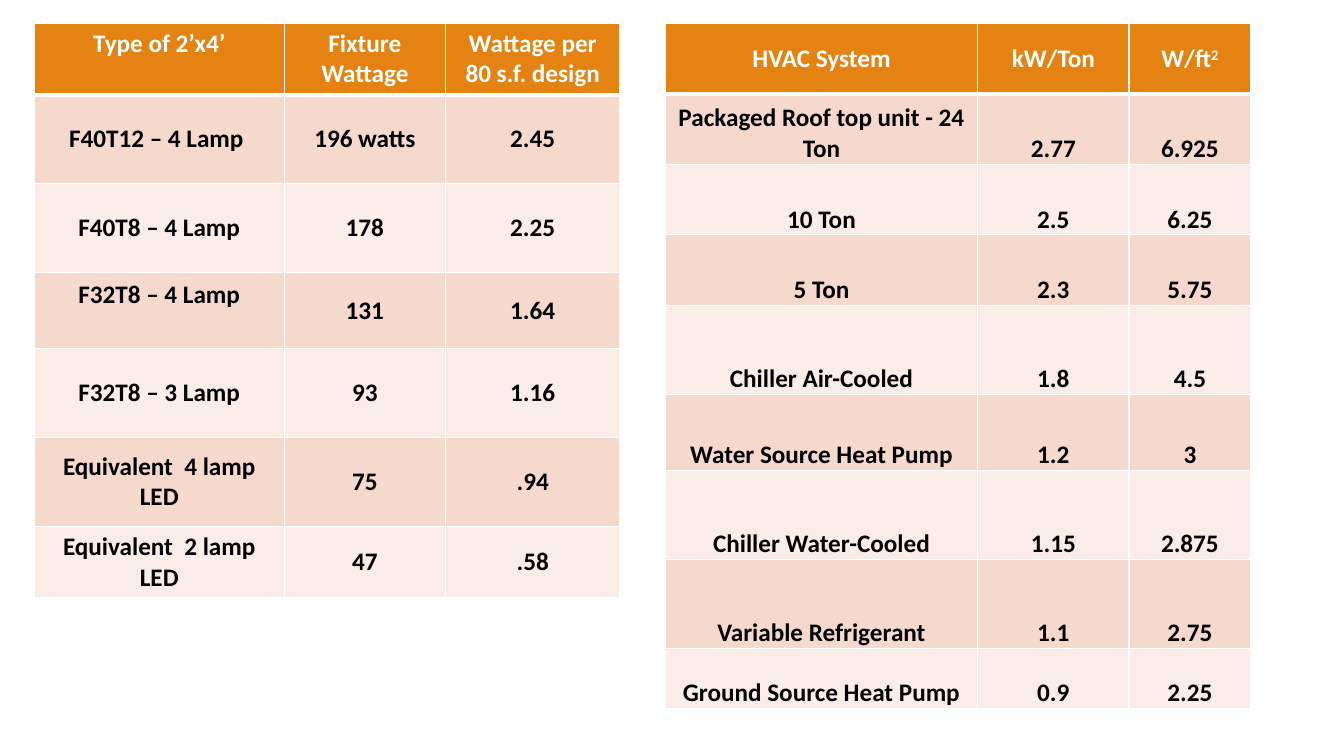
from lxml import etree
from pptx import Presentation
from pptx.dml.color import RGBColor
from pptx.enum.text import MSO_ANCHOR, PP_ALIGN
from pptx.oxml.ns import qn
from pptx.util import Pt

TOP, MIDDLE, BOTTOM = MSO_ANCHOR.TOP, MSO_ANCHOR.MIDDLE, MSO_ANCHOR.BOTTOM
CENTER = PP_ALIGN.CENTER
COLORS = {"header": "E48312", "odd": "F5D9CC", "even": "FAEDE7",
          "white": "FFFFFF", "black": "000000"}

lighting = {
    "left": 24.48,
    "widths": [178.56, 115.2, 124.56],
    "heights": [50.4, 63.36, 63.36, 54.72, 63.36, 63.36, 50.4],
    "anchors": (TOP, MIDDLE),
    "insets": (7.2, 3.6, 7.2, 3.6),
    "rows": [
        ("Type of 2’x4’", "Fixture Wattage", "Wattage per 80 s.f. design"),
        ("F40T12 – 4 Lamp ", "196 watts", "2.45"),
        ("F40T8 – 4 Lamp", "178", "2.25"),
        ("F32T8 – 4 Lamp", "131", "1.64"),
        ("F32T8 – 3 Lamp", "93", "1.16"),
        ("Equivalent  4 lamp LED", "75", ".94"),
        ("Equivalent  2 lamp LED", "47", ".58"),
    ],
}
hvac = {
    "left": 475.2,
    "widths": [223.2, 108, 87.12],
    "heights": [50.4, 50.4, 50.4, 50.4, 63.36, 54.72, 63.36, 63.36, 43.2],
    "anchors": (MIDDLE, BOTTOM),
    "insets": (0.72, 0.72, 0.72, 0),
    "rows": [
        ("HVAC System", "kW/Ton", "W/ft^2"),
        ("Packaged Roof top unit - 24 Ton", "2.77", "6.925"),
        ("10 Ton", "2.5", "6.25"),
        ("5 Ton", "2.3", "5.75"),
        ("Chiller Air-Cooled", "1.8", "4.5"),
        ("Water Source Heat Pump", "1.2", "3"),
        ("Chiller Water-Cooled", "1.15", "2.875"),
        ("Variable Refrigerant", "1.1", "2.75"),
        ("Ground Source Heat Pump", "0.9", "2.25"),
    ],
}


def write_text(cell, text, *, color, anchor, insets):
    """Write centred bold text; what follows a ^ is superscript."""
    cell.vertical_anchor = anchor
    (cell.margin_left, cell.margin_top,
     cell.margin_right, cell.margin_bottom) = map(Pt, insets)
    paragraph = cell.text_frame.paragraphs[0]
    paragraph.alignment = CENTER
    for level, part in enumerate(text.split("^")):
        run = paragraph.add_run()
        run.text = part
        run.font.name = "Calibri"
        run.font.size = Pt(18)
        run.font.bold = True
        run.font.color.rgb = RGBColor.from_string(COLORS[color])
        if level:
            run._r.get_or_add_rPr().set("baseline", "30000")


def set_borders(cell, top, bottom):
    """Draw white cell borders; widths of top and bottom are in points."""
    properties = cell._tc.get_or_add_tcPr()
    sides = {"a:lnL": 1, "a:lnR": 1, "a:lnT": top, "a:lnB": bottom}
    for position, (side, width) in enumerate(sides.items()):
        line = etree.Element(qn(side), w=str(Pt(width)))
        fill = etree.SubElement(line, qn("a:solidFill"))
        etree.SubElement(fill, qn("a:srgbClr"), val=COLORS["white"])
        properties.insert(position, line)


prs = Presentation()
prs.slide_width, prs.slide_height = Pt(960), Pt(540)
slide = prs.slides.add_slide(prs.slide_layouts[6])

for data in (lighting, hvac):
    rows, widths, heights = data["rows"], data["widths"], data["heights"]
    table = slide.shapes.add_table(
        len(rows), len(widths), Pt(data["left"]), Pt(16.56),
        Pt(sum(widths)), Pt(sum(heights))).table
    for column, width in zip(table.columns, widths):
        column.width = Pt(width)
    for r, (texts, height) in enumerate(zip(rows, heights)):
        table.rows[r].height = Pt(height)
        band = "header" if r == 0 else "odd" if r % 2 else "even"
        for c, text in enumerate(texts):
            cell = table.cell(r, c)
            cell.fill.solid()
            cell.fill.fore_color.rgb = RGBColor.from_string(COLORS[band])
            write_text(cell, text, color="black" if r else "white",
                       anchor=data["anchors"][min(r, 1)],
                       insets=data["insets"])
            set_borders(cell, top=3 if r == 1 else 1, bottom=1 if r else 3)
    if data is lighting:
        # This lamp name sits one line higher than its row's values
        table.cell(3, 0).margin_bottom = Pt(25.6)

prs.save("out.pptx")
